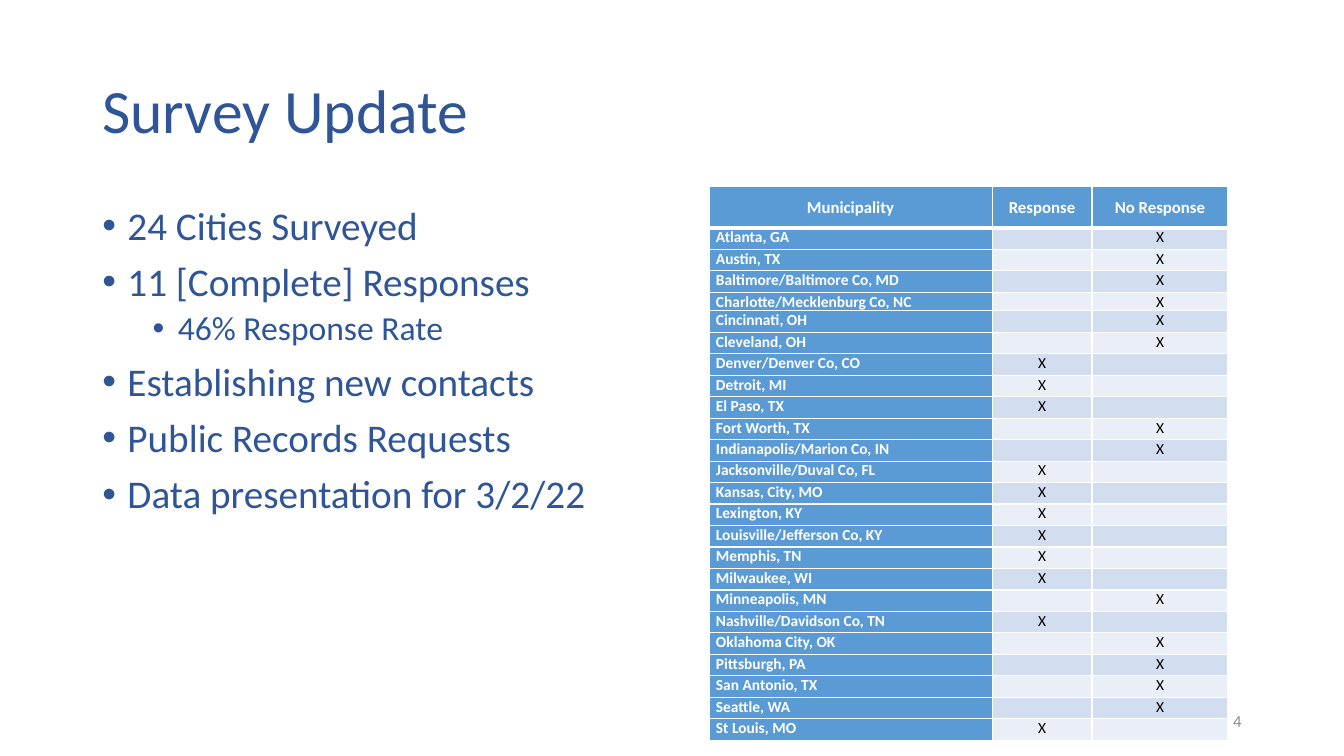
from lxml.etree import SubElement
from pptx import Presentation
from pptx.dml.color import RGBColor
from pptx.enum.text import MSO_ANCHOR, PP_ALIGN
from pptx.oxml.ns import qn
from pptx.util import Pt

TITLE = "Survey Update"
PAGE = "4"
POINTS = [
    ("24 Cities Surveyed", 0),
    ("11 [Complete] Responses", 0),
    ("46% Response Rate", 1),
    ("Establishing new contacts", 0),
    ("Public Records Requests", 0),
    ("Data presentation for 3/2/22", 0),
]
HEADERS = ["Municipality", "Response", "No Response"]
CITIES = [
    ("Atlanta, GA", False),
    ("Austin, TX", False),
    ("Baltimore/Baltimore Co, MD", False),
    ("Charlotte/Mecklenburg Co, NC", False),
    ("Cincinnati, OH", False),
    ("Cleveland, OH", False),
    ("Denver/Denver Co, CO", True),
    ("Detroit, MI", True),
    ("El Paso, TX", True),
    ("Fort Worth, TX", False),
    ("Indianapolis/Marion Co, IN", False),
    ("Jacksonville/Duval Co, FL", True),
    ("Kansas, City, MO", True),
    ("Lexington, KY", True),
    ("Louisville/Jefferson Co, KY", True),
    ("Memphis, TN", True),
    ("Milwaukee, WI", True),
    ("Minneapolis, MN", False),
    ("Nashville/Davidson Co, TN", True),
    ("Oklahoma City, OK", False),
    ("Pittsburgh, PA", False),
    ("San Antonio, TX", False),
    ("Seattle, WA", False),
    ("St Louis, MO", True),
]
NAVY, BLUE, WHITE, BLACK, GRAY = "2F5597", "5B9BD5", "FFFFFF", "000000", "8C8C8C"
BANDS = ["D2DEEF", "EAEFF7"]
COLUMN_WIDTHS = [202.3, 71.3, 97.2]
HEADER_HEIGHT, CITY_HEIGHT = 29.4, 15.35
SPECIAL_HEIGHTS = {4: 13.2, 24: 15.9}


def color(value):
    return RGBColor.from_string(value)


def write(paragraph, text, size, fill, bold=False, align=PP_ALIGN.LEFT, spacing=None, before=0):
    paragraph.alignment = align
    paragraph.line_spacing = spacing
    paragraph.space_before = Pt(before)
    if text:
        run = paragraph.add_run()
        run.text = text
        run.font.size = Pt(size)
        run.font.name = "Calibri"
        run.font.bold = bold
        run.font.color.rgb = color(fill)
    else:
        SubElement(paragraph._p, qn("a:endParaRPr"), sz=str(size * 100))


def add_frame(slide, left, top, width, height, anchor):
    frame = slide.shapes.add_textbox(Pt(left), Pt(top), Pt(width), Pt(height)).text_frame
    frame.word_wrap = True
    frame.vertical_anchor = anchor
    return frame


def add_bullet(paragraph, level):
    properties = paragraph._p.get_or_add_pPr()
    properties.set("marL", str(Pt(18 + 36 * level)))
    properties.set("indent", str(Pt(-18)))
    SubElement(properties, qn("a:buFont"), typeface="Arial")
    SubElement(properties, qn("a:buChar"), char="•")


def style_cell(cell, fill, top, bottom):
    cell.margin_left = cell.margin_right = Pt(5)
    cell.margin_top = cell.margin_bottom = 0
    properties = cell._tc.get_or_add_tcPr()
    for side, weight in {"L": 1, "R": 1, "T": top, "B": bottom}.items():
        line = SubElement(properties, qn(f"a:ln{side}"), w=str(Pt(weight)))
        SubElement(SubElement(line, qn("a:solidFill")), qn("a:srgbClr"), val=WHITE)
    cell.fill.solid()
    cell.fill.fore_color.rgb = color(fill)


def add_city_table(slide):
    rows = [HEADERS]
    for city, responded in CITIES:
        rows.append([city, "X" if responded else "", "" if responded else "X"])
    heights = [HEADER_HEIGHT]
    heights += [SPECIAL_HEIGHTS.get(number, CITY_HEIGHT) for number in range(1, len(rows))]
    table = slide.shapes.add_table(
        len(rows), len(HEADERS), Pt(506.4), Pt(133.4), Pt(sum(COLUMN_WIDTHS)), Pt(sum(heights))
    ).table
    table.first_row = table.horz_banding = False
    for column, width in zip(table.columns, COLUMN_WIDTHS):
        column.width = Pt(width)
    for r, (texts, height) in enumerate(zip(rows, heights)):
        table.rows[r].height = Pt(height)
        header = r == 0
        for c, text in enumerate(texts):
            cell = table.cell(r, c)
            label = header or c == 0
            style_cell(cell, BLUE if label else BANDS[(r - 1) % 2],
                       3 if r == 1 else 1, 3 if header else 1)
            cell.vertical_anchor = MSO_ANCHOR.MIDDLE if header else MSO_ANCHOR.TOP
            write(cell.text_frame.paragraphs[0], text, 12 if header else 11,
                  WHITE if label else BLACK, bold=label,
                  align=PP_ALIGN.CENTER if header or c else PP_ALIGN.LEFT)


def main():
    deck = Presentation()
    deck.slide_width, deck.slide_height = Pt(960), Pt(540)
    slide = deck.slides.add_slide(deck.slide_layouts[6])

    title = add_frame(slide, 66, 28.75, 828, 104.4, MSO_ANCHOR.MIDDLE)
    write(title.paragraphs[0], TITLE, 44, NAVY, spacing=0.9)

    body = add_frame(slide, 66, 143.75, 828, 342.6, MSO_ANCHOR.TOP)
    for number, (point, level) in enumerate(POINTS):
        paragraph = body.add_paragraph() if number else body.paragraphs[0]
        paragraph.level = level
        before = (5 if level else 10) if number else 0
        write(paragraph, point, 24 if level else 28, NAVY, spacing=0.9, before=before)
        add_bullet(paragraph, level)

    page = add_frame(slide, 678, 500.5, 216, 28.75, MSO_ANCHOR.MIDDLE)
    write(page.paragraphs[0], PAGE, 12, GRAY, align=PP_ALIGN.RIGHT)

    add_city_table(slide)
    deck.save("out.pptx")


if __name__ == "__main__":
    main()
